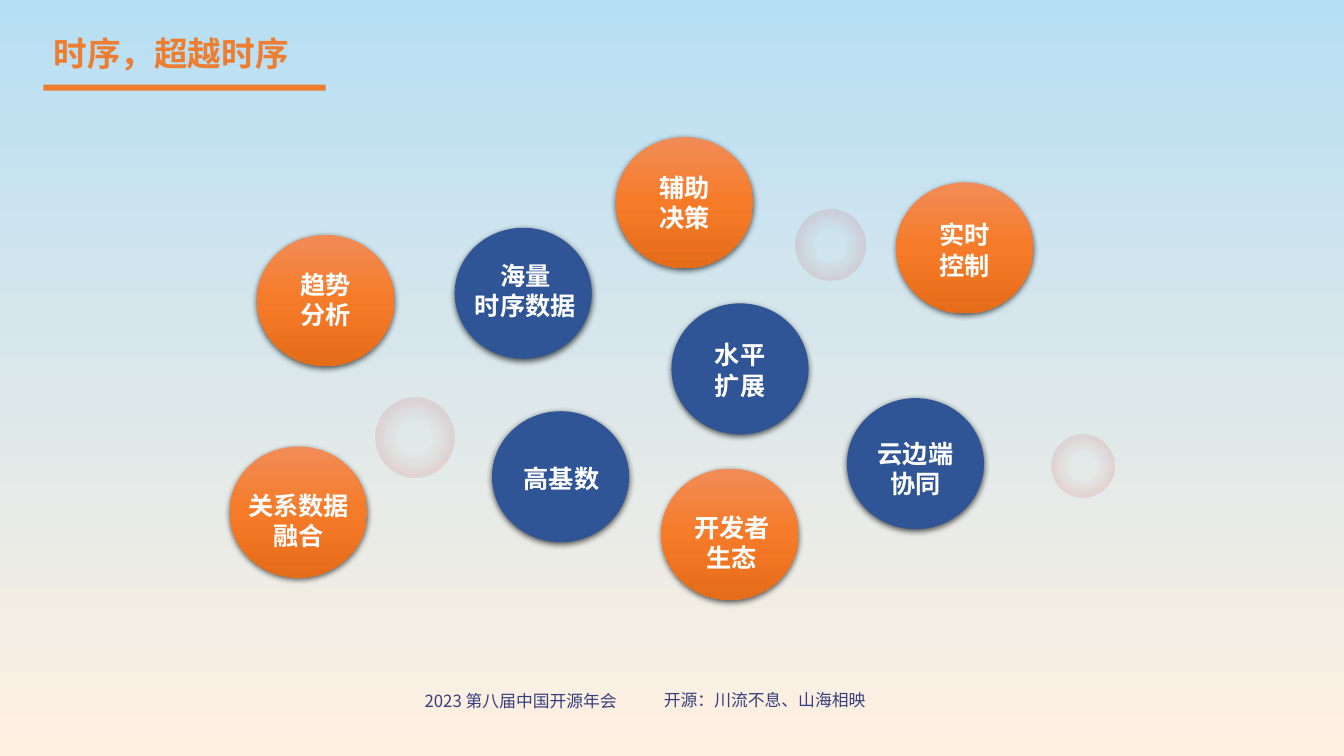
"""Builds the slide of time-series capabilities as labelled circles."""
from lxml.etree import SubElement
from pptx import Presentation
from pptx.dml.color import RGBColor
from pptx.enum.shapes import MSO_SHAPE
from pptx.enum.text import MSO_ANCHOR, MSO_AUTO_SIZE, PP_ALIGN
from pptx.oxml import parse_xml
from pptx.oxml.ns import nsdecls, qn
from pptx.util import Inches, Pt

FONT = "Noto Sans CJK SC"
ORANGE = RGBColor(0xED, 0x7D, 0x31)
BLUE = RGBColor(0x2F, 0x55, 0x97)
NAVY = RGBColor(0x36, 0x3E, 0x7D)
WHITE = RGBColor(0xFF, 0xFF, 0xFF)
SKY = RGBColor(0xB7, 0xDF, 0xF4)
CREAM = RGBColor(0xFF, 0xF0, 0xE1)
ORANGE_LIGHT = RGBColor(0xF1, 0x8C, 0x57)
ORANGE_MID = RGBColor(0xF6, 0x7B, 0x28)
ORANGE_DARK = RGBColor(0xE5, 0x6C, 0x19)
RED = RGBColor(0xC0, 0x00, 0x00)


def write(frame, lines, size, color, bold, align):
    frame.text = "\n".join(lines)
    frame.auto_size = MSO_AUTO_SIZE.SHAPE_TO_FIT_TEXT
    frame.vertical_anchor = MSO_ANCHOR.TOP
    for paragraph in frame.paragraphs:
        paragraph.alignment = align
        paragraph.font.size = Pt(size)
        paragraph.font.bold = bold
        paragraph.font.name = FONT
        paragraph.font.color.rgb = color
        properties = paragraph._p.pPr.find(qn("a:defRPr"))
        SubElement(properties, qn("a:ea")).set("typeface", FONT)


def fill_gradient(shape, stops, direction):
    shape.fill.background()
    stop_xml = "".join(
        f'<a:gs pos="{position * 1000}"><a:srgbClr val="{color}">'
        f'<a:alpha val="{alpha * 1000}"/></a:srgbClr></a:gs>'
        for position, color, alpha in stops)
    gradient = parse_xml(
        f'<a:gradFill {nsdecls("a")} rotWithShape="1">'
        f'<a:gsLst>{stop_xml}</a:gsLst>{direction}</a:gradFill>')
    properties = shape._element.spPr
    properties.replace(properties.find(qn("a:noFill")), gradient)


presentation = Presentation()
presentation.slide_width = Inches(13.33)
presentation.slide_height = Inches(7.5)
slide = presentation.slides.add_slide(presentation.slide_layouts[5])

background = slide.background.fill
background.gradient()
background.gradient_angle = 270
for stop, position, color in zip(background.gradient_stops, (0, 1), (SKY, CREAM)):
    stop.position = position
    stop.color.rgb = color

footers = [
    (3.79, 6.8, 2.75, "2023 第八届中国开源年会"),
    (6.38, 6.79, 2.41, "开源：川流不息、山海相映"),
]
for left, top, width, wording in footers:
    footer = slide.shapes.add_textbox(
        Inches(left), Inches(top), Inches(width), Inches(0.3))
    footer.text_frame.word_wrap = True
    write(footer.text_frame, [wording], 12, NAVY, False, PP_ALIGN.CENTER)

RING_STOPS = [(30, RED, 0), (100, RED, 17)]
RING_DIRECTION = ('<a:path path="circle">'
                  '<a:fillToRect l="50000" t="50000" r="50000" b="50000"/></a:path>')
rings = [(3.73, 3.95, 0.78), (10.43, 4.31, 0.62), (7.89, 2.08, 0.69)]
for left, top, width in rings:
    ring = slide.shapes.add_shape(
        MSO_SHAPE.OVAL, Inches(left), Inches(top), Inches(width), Inches(width + 0.01))
    ring.shadow.inherit = False
    ring.line.fill.background()
    fill_gradient(ring, RING_STOPS, RING_DIRECTION)

TOPIC_STOPS = [(0, ORANGE_LIGHT, 100), (50, ORANGE_MID, 100), (100, ORANGE_DARK, 100)]
TOPIC_DIRECTION = '<a:lin ang="5400000" scaled="0"/>'
SHADOW = (f'<a:outerShdw {nsdecls("a")} blurRad="57150" dist="19050" dir="5400000" '
          'algn="ctr" rotWithShape="0"><a:srgbClr val="000000">'
          '<a:alpha val="63000"/></a:srgbClr></a:outerShdw>')
topics = [
    (4.51, 2.26, BLUE, 4.58, 2.58, 1.26, ["海量", "时序数据"]),
    (6.66, 3.01, BLUE, 6.97, 3.37, 0.74, ["水平", "扩展"]),
    (4.88, 4.08, BLUE, 5.05, 4.6, 1.04, ["高基数"]),
    (6.11, 1.36, ORANGE, 6.43, 1.71, 0.72, ["辅助", "决策"]),
    (8.89, 1.81, ORANGE, 9.21, 2.18, 0.72, ["实时", "控制"]),
    (8.4, 3.95, BLUE, 8.64, 4.35, 0.88, ["云边端", "协同"]),
    (6.56, 4.65, ORANGE, 6.76, 5.08, 1, ["开发者", "生态"]),
    (2.28, 4.43, ORANGE, 2.34, 4.86, 1.24, ["关系数据融合"]),
    (2.55, 2.33, ORANGE, 2.87, 2.67, 0.72, ["趋势", "分析"]),
]
for left, top, color, label_left, label_top, label_width, lines in topics:
    circle = slide.shapes.add_shape(
        MSO_SHAPE.OVAL, Inches(left), Inches(top), Inches(1.36), Inches(1.3))
    circle.line.fill.background()
    if color == BLUE:
        circle.fill.solid()
        circle.fill.fore_color.rgb = BLUE
    else:
        fill_gradient(circle, TOPIC_STOPS, TOPIC_DIRECTION)
    circle.shadow.inherit = False
    circle._element.spPr.find(qn("a:effectLst")).append(parse_xml(SHADOW))

    label_height = 0.3 if lines == ["高基数"] else 0.61
    label = slide.shapes.add_textbox(
        Inches(label_left), Inches(label_top), Inches(label_width), Inches(label_height))
    frame = label.text_frame
    frame.word_wrap = True
    frame.margin_left = frame.margin_right = frame.margin_top = frame.margin_bottom = 0
    write(frame, lines, 18, WHITE, True, PP_ALIGN.CENTER)

title = slide.shapes.title
title.left, title.top = Inches(0.43), Inches(0.28)
title.width, title.height = Inches(2.57), Inches(0.5)
title.text_frame.word_wrap = False
write(title.text_frame, ["时序，超越时序"], 24, ORANGE, True, PP_ALIGN.LEFT)

underline = slide.shapes.add_shape(
    MSO_SHAPE.RECTANGLE, Inches(0.43), Inches(0.84), Inches(2.8), Inches(0.06))
underline.shadow.inherit = False
underline.line.fill.background()
underline.fill.solid()
underline.fill.fore_color.rgb = ORANGE

presentation.save("out.pptx")
